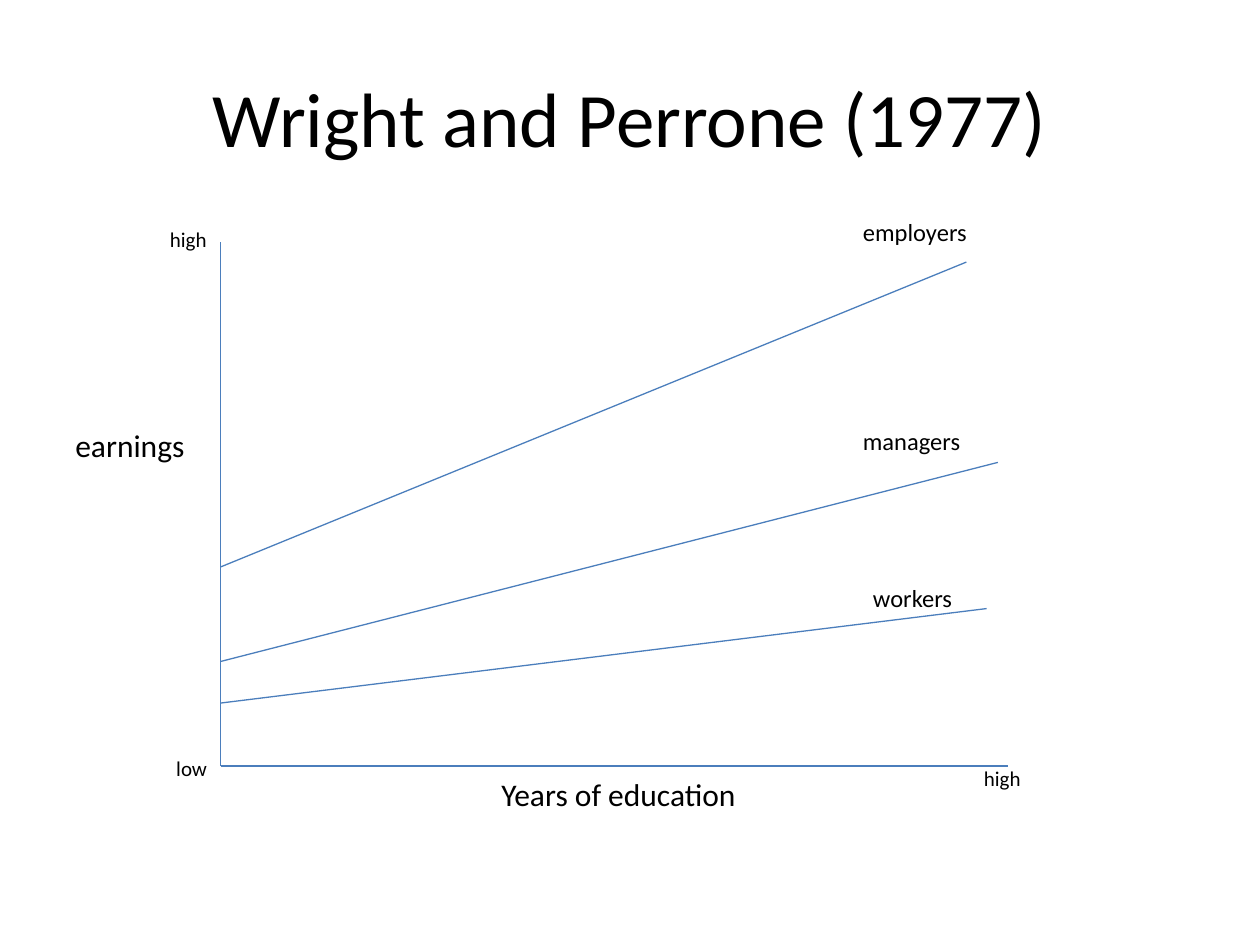
from lxml import etree
from pptx import Presentation
from pptx import util as u
from pptx.dml.color import RGBColor
from pptx.enum import shapes, text
from pptx.oxml.ns import qn

BLACK = RGBColor(0x00, 0x00, 0x00)
BLUE = RGBColor(0x4B, 0x7E, 0xBC)
FONT = "Calibri"

# Corner of the axes
LEFT, BASE = 1.75, 6.08

# Class, height at the axis, end of its line, place of its label
CLASSES = [
    ("workers", 5.58, (7.83, 4.83), (6.83, 4.58, 0.89, 0.34)),
    ("managers", 5.25, (7.92, 3.67), (6.75, 3.33, 1.08, 0.33)),
    ("employers", 4.5, (7.67, 2.08), (6.75, 1.67, 1.1, 0.34)),
]

# Text, place, size
LABELS = [
    ("earnings", (0.5, 3.33, 1.17, 0.4), 18),
    ("Years of education", (3.88, 6.1, 2.28, 0.4), 18),
    ("low", (1.3, 5.95, 0.45, 0.3), 12),
    ("high", (1.25, 1.75, 0.52, 0.3), 12),
    ("high", (7.71, 6.03, 0.52, 0.3), 12),
]


def write(frame, words, size=18, color=BLACK, align=text.PP_ALIGN.LEFT):
    par = frame.paragraphs[0]
    par.alignment = align
    run = par.add_run()
    run.text = words
    run.font.name = FONT
    run.font.size = u.Pt(size)
    run.font.color.rgb = color


def add_title(slide, words):
    title = slide.shapes.title
    title.left, title.top = u.Inches(0.5), u.Inches(0.3)
    title.width, title.height = u.Inches(9), u.Inches(1.25)
    title.text_frame.vertical_anchor = text.MSO_ANCHOR.MIDDLE
    write(title.text_frame, words, size=44, align=text.PP_ALIGN.CENTER)


def add_label(slide, words, place, size):
    box = slide.shapes.add_textbox(*map(u.Inches, place))
    box.text_frame.word_wrap = False
    box.text_frame.auto_size = text.MSO_AUTO_SIZE.SHAPE_TO_FIT_TEXT
    write(box.text_frame, words, size=size)


def add_line(slide, start, end):
    line = slide.shapes.add_connector(
        shapes.MSO_CONNECTOR.STRAIGHT, *map(u.Inches, start + end))
    line.line.color.rgb = BLUE
    line.line.width = u.Pt(0.75)
    # No shadow
    etree.SubElement(line._element.spPr, qn("a:effectLst"))


def main():
    deck = Presentation()
    deck.slide_width, deck.slide_height = u.Inches(10), u.Inches(7.5)
    slide = deck.slides.add_slide(deck.slide_layouts[5])
    add_title(slide, "Wright and Perrone (1977)")

    # Axes
    add_line(slide, (LEFT, BASE), (LEFT, 1.92))
    add_line(slide, (LEFT, BASE), (8, BASE))

    # Earnings line of each class
    for name, start, end, place in CLASSES:
        add_line(slide, (LEFT, start), end)
        add_label(slide, name, place, 14)

    # Axis names and ends
    for words, place, size in LABELS:
        add_label(slide, words, place, size)

    deck.save("out.pptx")


if __name__ == "__main__":
    main()
